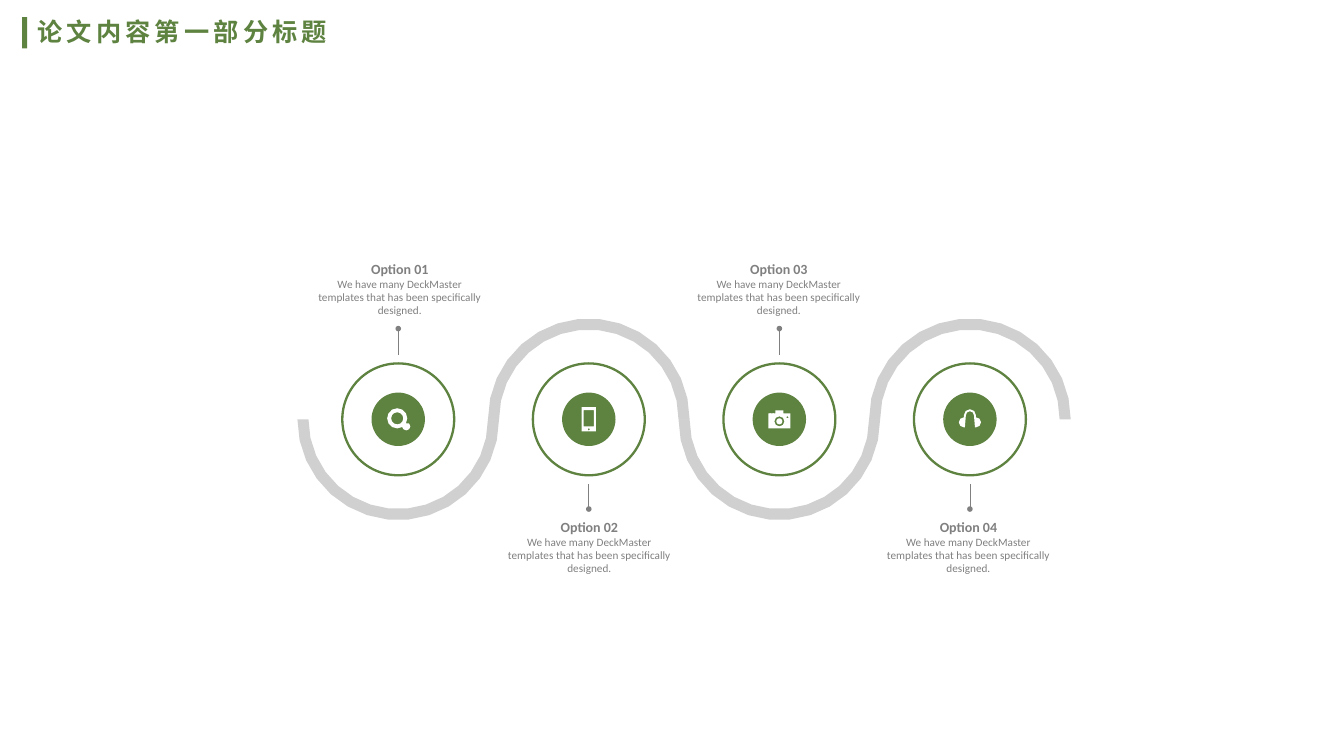
import math
from dataclasses import dataclass
from typing import Any

import lxml.etree
import pptx
import pptx.dml.color
import pptx.enum.shapes
import pptx.enum.text
import pptx.oxml.ns
import pptx.util

Inches = pptx.util.Inches
Kind = pptx.enum.shapes.MSO_SHAPE
Align = pptx.enum.text.PP_ALIGN
Point = tuple[float, float]
Path = list[Point]

COLORS = {"green": "5E8240", "gray": "808080", "wave": "181717", "white": "FFFFFF"}
BLURB = "We have many DeckMaster templates that has been specifically designed."
FONTS = {
    "title": {"name": "Calibri", "size": pptx.util.Pt(18), "bold": True},
    "head": {"name": "Calibri", "size": pptx.util.Pt(10), "bold": True},
    "body": {"name": "Calibri", "size": pptx.util.Pt(8), "bold": False},
}
LEFT, PITCH, MID = 3.95, 1.89, 4.16
TEXT_LEFT, TEXT_PITCH = 3.14, 1.88


def arc(x: float, y: float, r: float, start: float, end: float, step: float = 45) -> Path:
    """Points on an arc; angles are in degrees, clockwise from the right."""
    count = math.ceil(abs(end - start) / step)
    turns = [math.radians(start + (end - start) * i / count) for i in range(count + 1)]
    return [(x + r * math.cos(t), y + r * math.sin(t)) for t in turns]


def disc(x: float, y: float, r: float) -> Path:
    return arc(x, y, r, 0, 315)


def box(x: float, top: float, base: float) -> Path:
    return [(-x, top), (x, top), (x, base), (-x, base)]


# Icon outlines are in inches from the centre of their disc.
SEARCH = [
    arc(-0.01, -0.01, 0.1, 60, 390, 30) + arc(0.08, 0.07, 0.04, -45, 135),
    arc(-0.01, -0.01, 0.06, 0, 330, 30),
]
PHONE = [box(0.07, -0.12, 0.12), box(0.05, -0.09, 0.07), disc(0, 0.1, 0.01)]
CAMERA = [
    [(-0.11, -0.06), (-0.04, -0.06), (-0.04, -0.09), (0.04, -0.09),
     (0.04, -0.06), (0.11, -0.06), (0.11, 0.09), (-0.11, 0.09)],
    disc(0, 0.02, 0.05),
    disc(0.08, -0.02, 0.01),
]
PHONES = [
    arc(0.06, 0.03, 0.05, 90, -90) + arc(0, -0.04, 0.06, 0, -180)
    + arc(-0.06, 0.03, 0.05, -90, -270) + [(-0.05, 0.08)]
    + arc(0, -0.04, 0.04, -180, 0) + [(0.05, 0.08)],
]


@dataclass
class Option:
    title: str
    icon: list[Path]
    above: bool
    dots: tuple[tuple[float, float, float], ...] = ()


OPTIONS = [
    Option("Option 01", SEARCH, True),
    Option("Option 02", PHONE, False),
    Option("Option 03", CAMERA, True,
           ((0, 0.02, 0.06), (-0.09, -0.05, 0.02), (-0.06, -0.05, 0.02))),
    Option("Option 04", PHONES, False),
]


def color(name: str) -> pptx.dml.color.RGBColor:
    return pptx.dml.color.RGBColor.from_string(COLORS[name])


def paint(shape: Any, fill: str = "", line: str = "") -> None:
    shape.shadow.inherit = False
    if fill:
        shape.fill.solid()
        shape.fill.fore_color.rgb = color(fill)
    else:
        shape.fill.background()
    if line:
        shape.line.color.rgb = color(line)
        shape.line.width = pptx.util.Pt(1.63)
    else:
        shape.line.fill.background()


def style(run: Any, font: str, tint: str) -> None:
    for key, value in FONTS[font].items():
        setattr(run.font, key, value)
    run.font.color.rgb = color(tint)


def place(shape: Any, spot: dict[str, float]) -> None:
    for key, value in spot.items():
        setattr(shape, key, Inches(value))


def add_disc(slide: Any, x: float, y: float, size: float, **looks: str) -> None:
    sides = (x - size / 2, y - size / 2, size, size)
    paint(slide.shapes.add_shape(Kind.OVAL, *map(Inches, sides)), **looks)


def trace(slide: Any, x: float, y: float, paths: list[Path], fill: str) -> Any:
    """Draw closed outlines as one shape; inner outlines become holes."""
    spots = [[(Inches(x + a), Inches(y + b)) for a, b in path] for path in paths]
    pen = slide.shapes.build_freeform(*spots[0][0], scale=1.0)
    pen.add_line_segments(spots[0][1:], close=True)
    for path in spots[1:]:
        pen.move_to(*path[0])
        pen.add_line_segments(path[1:], close=True)
    shape = pen.convert_to_shape()
    paint(shape, fill)
    return shape


def add_wave(slide: Any, x: float, end: float) -> None:
    """Draw a half ring from the left, 180 degrees, to the end angle."""
    band = arc(0, 0, 1, 180, end, 12) + arc(0, 0, 0.89, end, 180, 12)
    shape = trace(slide, x, MID, [band], "wave")
    tint = shape._element.xpath("./p:spPr/a:solidFill/a:srgbClr")[0]
    lxml.etree.SubElement(tint, pptx.oxml.ns.qn("a:alpha"), val="20000")


def add_stem(slide: Any, x: float, start: float, end: float) -> None:
    ends = map(Inches, (x, start, x, end))
    stem = slide.shapes.add_connector(pptx.enum.shapes.MSO_CONNECTOR.STRAIGHT, *ends)
    stem.line.color.rgb = color("gray")
    stem.line.width = pptx.util.Pt(0.5)
    qn = pptx.oxml.ns.qn
    props = stem._element.spPr
    head = {"type": "oval", "w": "sm", "len": "sm"}
    lxml.etree.SubElement(props.find(qn("a:ln")), qn("a:tailEnd"), head)
    lxml.etree.SubElement(props, qn("a:effectLst"))


def add_text(slide: Any, x: float, y: float, title: str) -> None:
    frame = slide.shapes.add_textbox(*map(Inches, (x, y, 1.65, 0.57))).text_frame
    frame.word_wrap = True
    for side in ("left", "top", "right", "bottom"):
        setattr(frame, f"margin_{side}", 0)
    lines = ((frame.paragraphs[0], title, "head"), (frame.add_paragraph(), BLURB, "body"))
    for line, words, font in lines:
        line.alignment = Align.CENTER
        run = line.add_run()
        run.text = words
        style(run, font, "gray")


def add_option(slide: Any, i: int, item: Option) -> None:
    x = LEFT + PITCH * i
    add_disc(slide, x, MID, 1.11, line="green")
    add_disc(slide, x, MID, 0.53, fill="green")
    add_wave(slide, x, 0 if item.above else 360)
    start, end, top = (3.52, 3.26, 2.58) if item.above else (4.8, 5.05, 5.14)
    add_stem(slide, x, start, end)
    trace(slide, x, MID, item.icon, "white")
    for a, b, size in item.dots:
        add_disc(slide, x + a, MID + b, size, fill="white")
    add_text(slide, TEXT_LEFT + TEXT_PITCH * i, top, item.title)


def add_title(slide: Any) -> None:
    title = slide.shapes.title
    place(title, {"left": 0.27, "top": 0.11, "width": 3.13, "height": 0.4})
    frame = title.text_frame
    frame.word_wrap = False
    frame.auto_size = pptx.enum.text.MSO_AUTO_SIZE.SHAPE_TO_FIT_TEXT
    frame.paragraphs[0].alignment = Align.LEFT
    run = frame.paragraphs[0].add_run()
    run.text = "论文内容第一部分标题"
    style(run, "title", "green")
    run.font._element.set("spc", "300")
    bar = slide.shapes.add_shape(Kind.RECTANGLE, *map(Inches, (0.22, 0.17, 0.05, 0.31)))
    paint(bar, "green")


def main() -> None:
    deck = pptx.Presentation()
    deck.slide_width, deck.slide_height = Inches(13.33), Inches(7.5)
    slide = deck.slides.add_slide(deck.slide_layouts.get_by_name("Title Only"))
    add_title(slide)
    for i, item in enumerate(OPTIONS):
        add_option(slide, i, item)
    deck.save("out.pptx")


if __name__ == "__main__":
    main()
